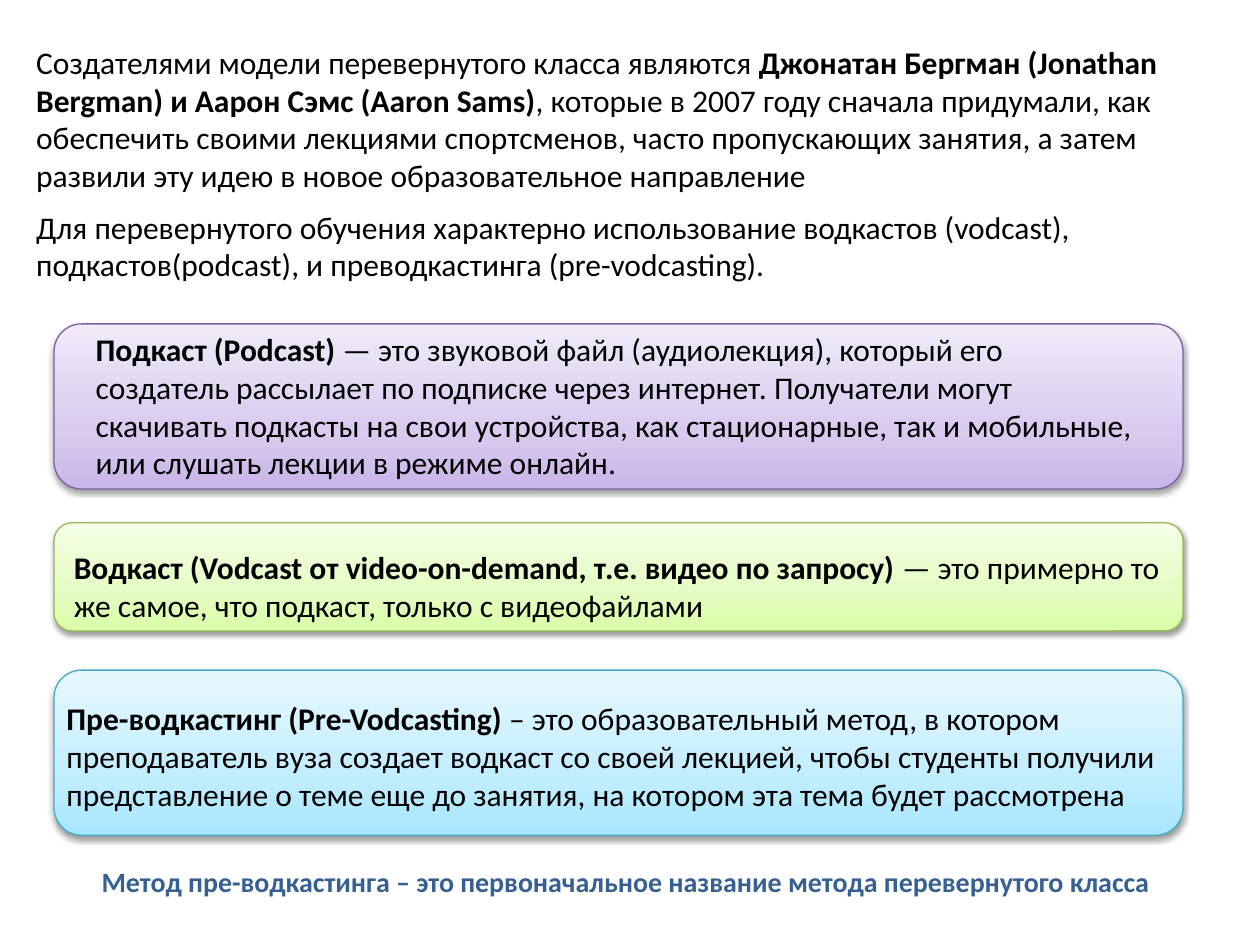
from dataclasses import dataclass

from lxml.etree import SubElement
from copy import deepcopy
from pptx import Presentation
from pptx.dml.color import RGBColor
from pptx.enum.shapes import MSO_SHAPE
from pptx.enum.text import MSO_AUTO_SIZE, PP_ALIGN
from pptx.oxml.ns import qn
from pptx.util import Cm, Pt


@dataclass(frozen=True)
class Theme:
    font: str = "Calibri"
    body_size: int = 18
    note_size: int = 16
    text: str = "000000"
    note: str = "376092"
    stops: tuple = (0, 0.35, 1)
    purple: tuple = ("7D60A0", "C9B5E8", "D8CBEE", "F0EAF9")
    green: tuple = ("98B955", "DAFDA7", "E4FCC2", "F5FFE7")
    blue: tuple = ("46AAC5", "A7E6FF", "C1EDFF", "E7F8FF")


class SlideBuilder:
    def __init__(self, page, theme):
        self.page = page
        self.theme = theme

    def text(self, place, spans, size=None, color=None, align=PP_ALIGN.LEFT):
        box = self.page.shapes.add_textbox(*map(Cm, place))
        frame = box.text_frame
        frame.word_wrap = True
        frame.auto_size = MSO_AUTO_SIZE.SHAPE_TO_FIT_TEXT
        para = frame.paragraphs[0]
        para.alignment = align
        para.font.name = self.theme.font
        para.font.size = Pt(size or self.theme.body_size)
        para.font.color.rgb = RGBColor.from_string(color or self.theme.text)
        for content, bold in spans:
            span = para.add_run()
            span.text = content
            span.font.bold = bold

    def panel(self, place, colors):
        line_color, *fill_colors = colors
        panel = self.page.shapes.add_shape(MSO_SHAPE.ROUNDED_RECTANGLE, *map(Cm, place))
        panel.fill.gradient()
        panel.fill.gradient_angle = 90
        properties = panel._element.spPr
        stop_list = properties.find(".//" + qn("a:gsLst"))
        stop_list.append(deepcopy(stop_list[0]))
        for stop, position, color in zip(panel.fill.gradient_stops, self.theme.stops, fill_colors):
            stop.position = position
            stop.color.rgb = RGBColor.from_string(color)
        panel.line.color.rgb = RGBColor.from_string(line_color)
        panel.line.width = Pt(0.75)
        self.shadow(panel, properties)

    def shadow(self, panel, properties):
        panel.shadow.inherit = False
        effects = properties.find(qn("a:effectLst"))
        shadow = SubElement(effects, qn("a:outerShdw"), blurRad=str(Pt(3.1)),
                            dist=str(Pt(1.6)), dir="5400000", rotWithShape="0")
        color = SubElement(shadow, qn("a:srgbClr"), val="000000")
        SubElement(color, qn("a:alpha"), val="38000")


def main():
    deck = Presentation()
    deck.slide_width, deck.slide_height = Cm(25.4), Cm(19.05)
    theme = Theme()
    builder = SlideBuilder(deck.slides.add_slide(deck.slide_layouts[6]), theme)

    builder.text((0.48, 4.06, 23.39, 1.8), [
        ("Для перевернутого обучения характерно использование водкастов (vodcast), "
         "подкастов(podcast), и преводкастинга (pre-vodcasting).", False)])
    builder.text((0.48, 0.74, 23.39, 3.33), [
        ("Создателями модели перевернутого класса являются ", False),
        ("Джонатан Бергман (Jonathan Bergman) и Аарон Сэмс (Aaron Sams)", True),
        (", которые в 2007 году сначала придумали, как обеспечить своими лекциями спортсменов, "
         "часто пропускающих занятия, а затем развили эту идею в новое образовательное "
         "направление", False)])

    definitions = [
        (6.53, 3.33, theme.purple, (1.68, 6.53, 21.59, 3.33),
         "Подкаст (Podcast)",
         " — это звуковой файл (аудиолекция), который его создатель рассылает по подписке "
         "через интернет. Получатели могут скачивать подкасты на свои устройства, как "
         "стационарные, так и мобильные, или слушать лекции в режиме онлайн."),
        (10.54, 2.18, theme.green, (1.24, 10.92, 22.63, 1.8),
         "Водкаст (Vodcast от video-on-demand, т.е. видео по запросу)",
         " — это примерно то же самое, что подкаст, только с видеофайлами"),
        (13.51, 3.33, theme.blue, (1.09, 13.97, 22.58, 2.57),
         "Пре-водкастинг (Pre-Vodcasting)",
         " – это образовательный метод, в котором преподаватель вуза создает водкаст со своей "
         "лекцией, чтобы студенты получили представление о теме еще до занятия, на котором "
         "эта тема будет рассмотрена"),
    ]
    for top, height, colors, text_place, term, meaning in definitions:
        builder.panel((1.09, top, 22.76, height), colors)
        builder.text(text_place, [(term, True), (meaning, False)])

    builder.text((1.3, 17.3, 22.63, 0.94), [
        ("Метод пре-водкастинга – это первоначальное название метода перевернутого класса", True)],
        theme.note_size, theme.note, PP_ALIGN.CENTER)
    deck.save("out.pptx")


if __name__ == "__main__":
    main()
